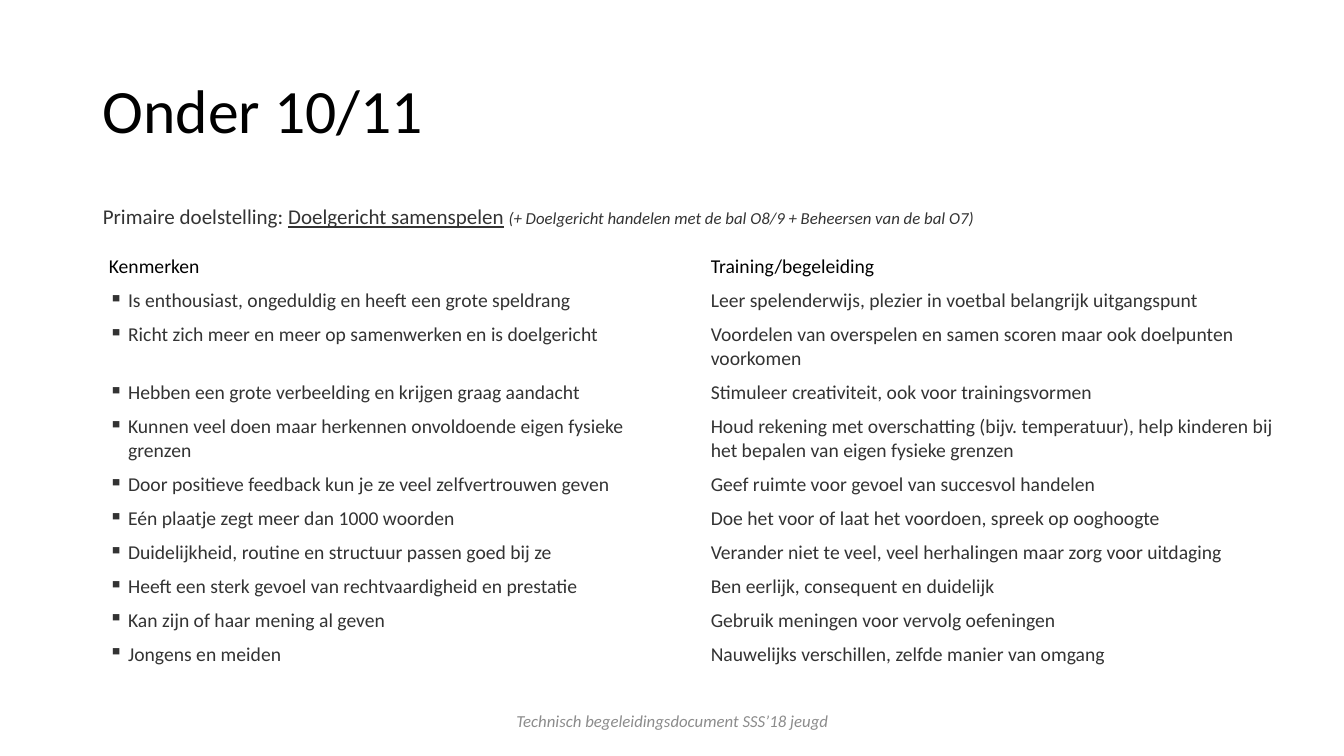
from dataclasses import dataclass

from lxml import etree
from pptx import Presentation
from pptx.dml.color import RGBColor
from pptx.enum.text import MSO_ANCHOR, MSO_AUTO_SIZE, PP_ALIGN
from pptx.oxml.ns import qn
from pptx.util import Pt

LEFT, CENTER = PP_ALIGN.LEFT, PP_ALIGN.CENTER
TOP, MIDDLE = MSO_ANCHOR.TOP, MSO_ANCHOR.MIDDLE
NO_FIT = MSO_AUTO_SIZE.NONE
EMU_PER_PX = 9144  # 100 px to the inch


def px(length):
    return length * EMU_PER_PX


@dataclass(frozen=True)
class Theme:
    font: str = "Calibri"
    black: str = "000000"
    dark: str = "333333"
    gray: str = "8C8C8C"
    title: int = 44
    goal: int = 15
    table: int = 14
    small: int = 12


class SlideBuilder:
    def __init__(self, deck, theme):
        self.theme = theme
        self.page = deck.slides.add_slide(deck.slide_layouts[1])

    def add_span(self, para, text, size, color, italic=False, underline=False):
        span = para.add_run()
        span.text = text
        font = span.font
        font.name, font.size = self.theme.font, Pt(size)
        font.color.rgb = RGBColor.from_string(color)
        font.italic, font.underline = italic, underline

    def set_bullet(self, para, char=None, indent=0):
        props = para._p.get_or_add_pPr()
        props.set("marL", str(px(indent)))
        props.set("indent", str(px(-indent)))
        if char:
            etree.SubElement(props, qn("a:buChar")).set("char", char)
        else:
            etree.SubElement(props, qn("a:buNone"))

    def fill_box(self, box, frame, spans, anchor=TOP, align=LEFT, spacing=1.0):
        box.left, box.top, box.width, box.height = map(px, frame)
        text = box.text_frame
        text.word_wrap, text.auto_size = True, NO_FIT
        text.vertical_anchor = anchor
        para = text.paragraphs[0]
        para.alignment, para.line_spacing = align, spacing
        para.space_before = Pt(0)
        for span in spans:
            self.add_span(para, *span)
        return para

    def title(self, frame, text):
        spans = [(text, self.theme.title, self.theme.black)]
        self.fill_box(self.page.shapes.title, frame, spans, MIDDLE, spacing=0.9)

    def body(self, frame, spans):
        box = self.page.placeholders[1]
        para = self.fill_box(box, frame, spans, spacing=0.9)
        self.set_bullet(para)

    def text_box(self, frame, spans):
        box = self.page.shapes.add_textbox(*map(px, frame))
        self.fill_box(box, frame, spans, MIDDLE, CENTER)

    def table(self, left, top, column_width, row_heights, rows):
        grid = self.page.shapes.add_table(
            len(rows), 2, px(left), px(top),
            px(2 * column_width), px(sum(row_heights))).table
        grid.first_row = grid.horz_banding = False
        for column in grid.columns:
            column.width = px(column_width)
        for row_index, texts in enumerate(rows):
            grid.rows[row_index].height = px(row_heights[row_index])
            color = self.theme.dark if row_index else self.theme.black
            for column_index, text in enumerate(texts):
                cell = grid.cell(row_index, column_index)
                cell.fill.background()
                para = cell.text_frame.paragraphs[0]
                if column_index == 0:
                    cell.margin_right = px(20)
                    if row_index:
                        self.set_bullet(para, "▪", 19)
                self.add_span(para, text, self.theme.table, color)


ROWS = [
    ("Kenmerken", "Training/begeleiding"),
    ("Is enthousiast, ongeduldig en heeft een grote speldrang",
     "Leer spelenderwijs, plezier in voetbal belangrijk uitgangspunt"),
    ("Richt zich meer en meer op samenwerken en is doelgericht",
     "Voordelen van overspelen en samen scoren maar ook doelpunten voorkomen"),
    ("Hebben een grote verbeelding en krijgen graag aandacht",
     "Stimuleer creativiteit, ook voor trainingsvormen"),
    ("Kunnen veel doen maar herkennen onvoldoende eigen fysieke grenzen",
     "Houd rekening met overschatting (bijv. temperatuur), help kinderen bij "
     "het bepalen van eigen fysieke grenzen"),
    ("Door positieve feedback kun je ze veel zelfvertrouwen geven",
     "Geef ruimte voor gevoel van succesvol handelen"),
    ("Eén plaatje zegt meer dan 1000 woorden",
     "Doe het voor of laat het voordoen, spreek op ooghoogte"),
    ("Duidelijkheid, routine en structuur passen goed bij ze",
     "Verander niet te veel, veel herhalingen maar zorg voor uitdaging"),
    ("Heeft een sterk gevoel van rechtvaardigheid en prestatie",
     "Ben eerlijk, consequent en duidelijk"),
    ("Kan zijn of haar mening al geven",
     "Gebruik meningen voor vervolg oefeningen"),
    ("Jongens en meiden",
     "Nauwelijks verschillen, zelfde manier van omgang"),
]
TWO_LINE_ROWS = {2, 4}


def main():
    deck = Presentation()
    deck.slide_width, deck.slide_height = px(1333), px(750)
    theme = Theme()
    builder = SlideBuilder(deck, theme)

    # Title and primary goal
    builder.title((92, 40, 1150, 145), "Onder 10/11")
    builder.body((92, 200, 1241, 476), [
        ("Primaire doelstelling: ", theme.goal, theme.dark),
        ("Doelgericht samenspelen", theme.goal, theme.dark, False, True),
        (" ", theme.goal, theme.dark),
        ("(+ Doelgericht handelen met de bal O8/9 + Beheersen van de bal O7)",
         theme.small, theme.dark, True),
    ])

    # Traits and matching guidance
    heights = [57 if index in TWO_LINE_ROWS else 33 for index in range(len(ROWS))]
    builder.table(98, 248, 597, heights, ROWS)

    # Footer
    builder.text_box((442, 695, 450, 40), [
        ("Technisch begeleidingsdocument SSS’18 jeugd",
         theme.small, theme.gray, True),
    ])

    deck.save("out.pptx")


if __name__ == "__main__":
    main()
